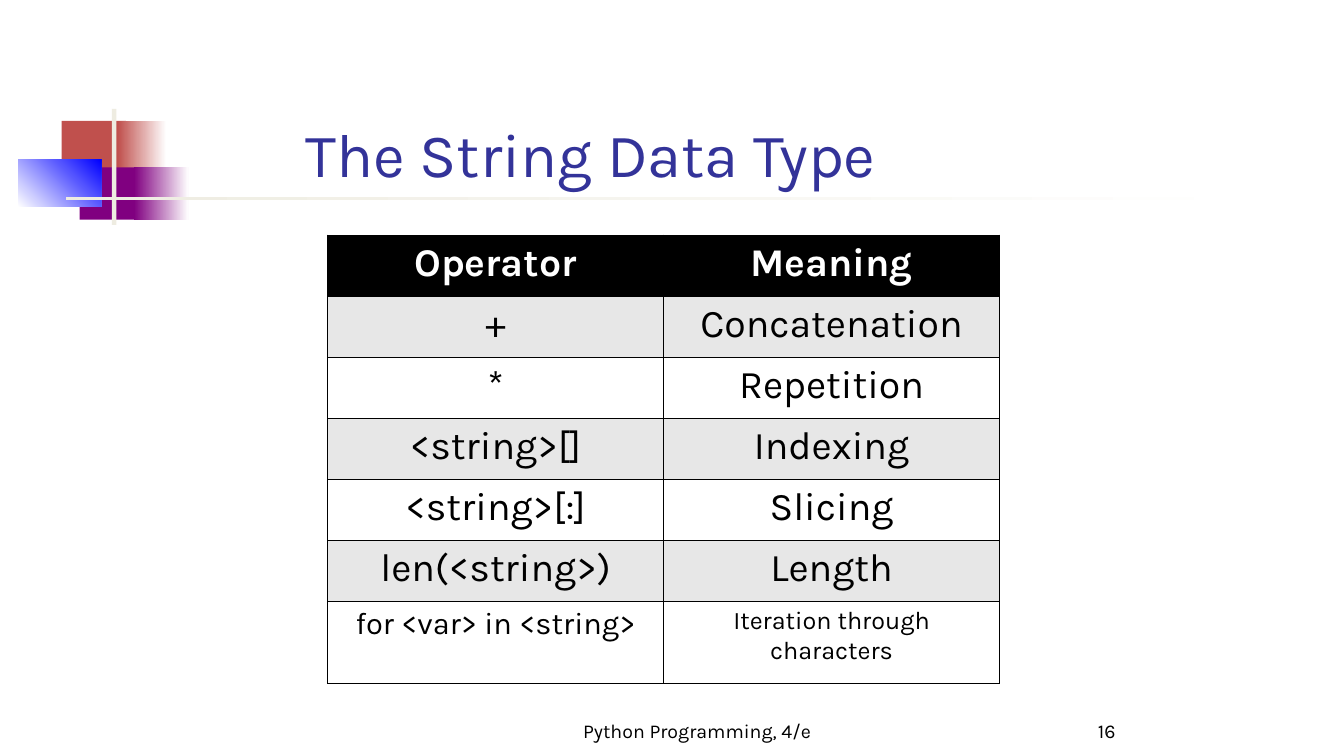
"""Builds the string operators slide."""
from dataclasses import dataclass
from typing import NamedTuple, Optional

from lxml import etree
from pptx import Presentation
from pptx.dml import color
from pptx.enum import shapes, text
from pptx.oxml import ns
from pptx.util import Pt


@dataclass(frozen=True)
class Theme:
    font: str = "Karla"
    ink: str = "000000"
    paper: str = "FFFFFF"
    head: str = "333399"
    band: str = "E7E7E7"
    red: str = "C0504D"
    plum: str = "800080"
    blue: str = "0000FF"
    sand: str = "EEECE1"
    title: float = 44
    cell: float = 28
    loop: float = 22
    note: float = 18
    foot: float = 14
    rule: float = 0.96


class Block(NamedTuple):
    left: float
    top: float
    width: float
    height: float
    start: str
    end: Optional[str] = None
    angle: float = 0


class Label(NamedTuple):
    left: float
    width: float
    words: str
    align: text.PP_ALIGN


class Row(NamedTuple):
    left: str
    right: str
    sizes: tuple = (Theme.cell, Theme.cell)
    height: float = 43.6


THEME = Theme()
MID = text.PP_ALIGN.CENTER
BLOCKS = [
    Block(44, 86.4, 46, 37.4, THEME.red),
    Block(84.2, 86.4, 34.6, 37.4, THEME.red, THEME.paper),
    Block(56.9, 119.5, 44, 37.4, THEME.plum),
    Block(95.8, 119.5, 38.9, 37.4, THEME.plum, THEME.paper),
    Block(13.2, 113.8, 59, 34, THEME.paper, THEME.blue, 45),
    Block(80, 77.8, 3.2, 82.8, THEME.sand),
    Block(46.8, 140.4, 863.3, 2.4, THEME.sand, THEME.paper),
]
LABELS = [
    Label(384, 228, "Python Programming, 4/e", MID),
    Label(654, 150, "16", text.PP_ALIGN.RIGHT),
]
ROWS = [
    Row("Operator", "Meaning"),
    Row("+", "Concatenation"),
    Row("*", "Repetition"),
    Row("<string>[]", "Indexing"),
    Row("<string>[:]", "Slicing"),
    Row("len(<string>)", "Length"),
    Row("for <var> in <string>", "Iteration through characters",
        (THEME.loop, THEME.note), 58.6),
]


def rgb(code: str) -> color.RGBColor:
    return color.RGBColor.from_string(code)


def write(frame, words: str, *, size: float, tint: str = THEME.ink,
          bold: bool = False, align=text.PP_ALIGN.LEFT) -> None:
    para = frame.paragraphs[0]
    para.alignment = align
    run = para.add_run()
    run.text = words
    font = run.font
    font.name, font.size, font.bold = THEME.font, Pt(size), bold
    font.color.rgb = rgb(tint)


def seat(frame) -> None:
    frame.word_wrap = True
    frame.auto_size = text.MSO_AUTO_SIZE.NONE
    frame.vertical_anchor = text.MSO_ANCHOR.BOTTOM


def draw(slide, block: Block) -> None:
    shape = slide.shapes.add_shape(
        shapes.MSO_SHAPE.RECTANGLE, *(Pt(n) for n in block[:4]))
    shape.shadow.inherit = False
    shape.line.fill.background()
    if block.end is None:
        shape.fill.solid()
        shape.fill.fore_color.rgb = rgb(block.start)
        return
    shape.fill.gradient()
    shape.fill.gradient_angle = block.angle
    for stop, tint in zip(shape.fill.gradient_stops, (block.start, block.end)):
        stop.color.rgb = rgb(tint)


def label(slide, item: Label) -> None:
    box = slide.shapes.add_textbox(Pt(item.left), Pt(498), Pt(item.width), Pt(36))
    seat(box.text_frame)
    write(box.text_frame, item.words, size=THEME.foot, align=item.align)


def edge(cell) -> None:
    props = cell._tc.get_or_add_tcPr()
    for spot, side in enumerate(("lnL", "lnR", "lnT", "lnB")):
        line = etree.Element(ns.qn(f"a:{side}"), w=str(Pt(THEME.rule)))
        fill = etree.SubElement(line, ns.qn("a:solidFill"))
        etree.SubElement(fill, ns.qn("a:srgbClr"), val=THEME.ink)
        props.insert(spot, line)


def grid(slide, rows: list) -> None:
    high = sum(row.height for row in rows)
    table = slide.shapes.add_table(
        len(rows), 2, Pt(234), Pt(168), Pt(480), Pt(high)).table
    table.horz_banding = False
    for num, row in enumerate(rows):
        table.rows[num].height = Pt(row.height)
        top = num == 0
        back = THEME.ink if top else THEME.band if num % 2 else THEME.paper
        for col, words in enumerate((row.left, row.right)):
            cell = table.cell(num, col)
            cell.fill.solid()
            cell.fill.fore_color.rgb = rgb(back)
            edge(cell)
            write(cell.text_frame, words, size=row.sizes[col], bold=top,
                  tint=THEME.paper if top else THEME.ink, align=MID)


def main() -> None:
    deck = Presentation()
    deck.slide_width, deck.slide_height = Pt(960), Pt(540)
    slide = deck.slides.add_slide(deck.slide_layouts[5])
    for block in BLOCKS:
        draw(slide, block)
    for item in LABELS:
        label(slide, item)
    title = slide.shapes.title
    title.left, title.top = Pt(211), Pt(49)
    title.width, title.height = Pt(613.4), Pt(90)
    seat(title.text_frame)
    write(title.text_frame, "The String Data Type",
          size=THEME.title, tint=THEME.head)
    grid(slide, ROWS)
    deck.save("out.pptx")


if __name__ == "__main__":
    main()
